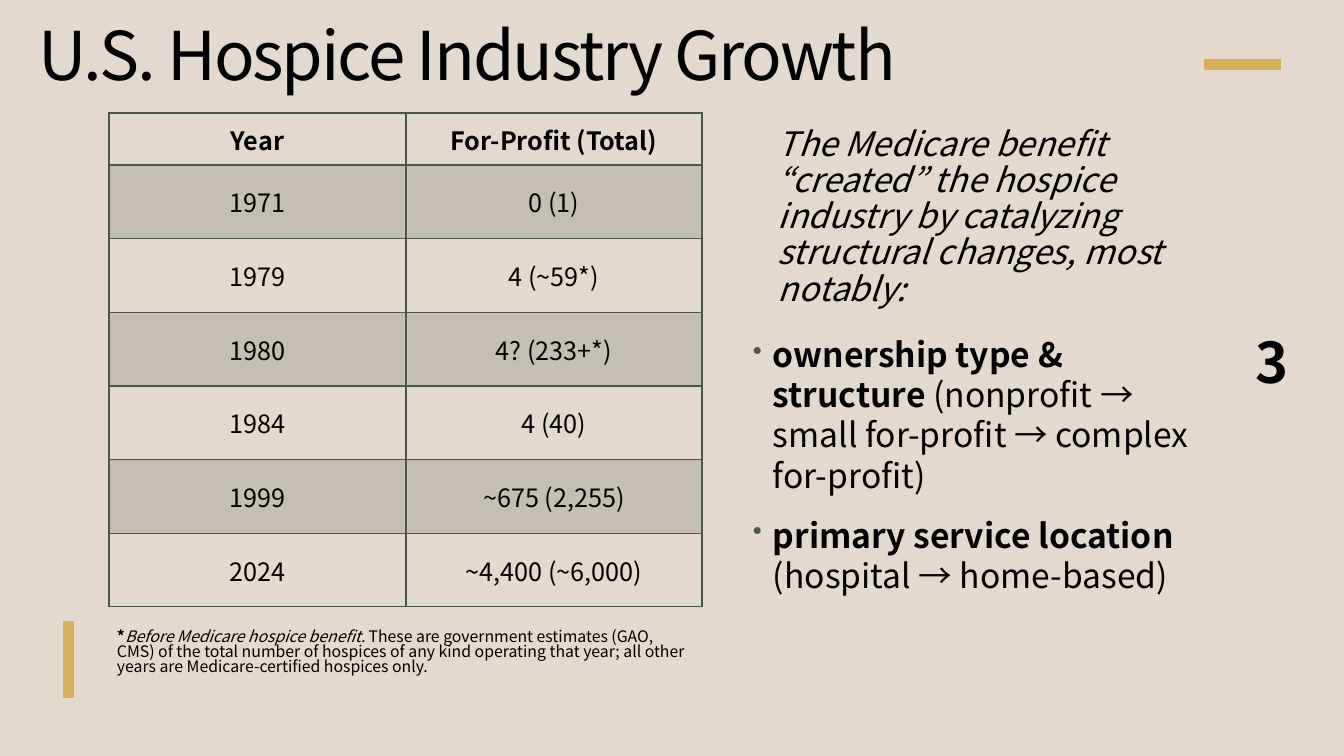
from dataclasses import dataclass

from lxml.etree import SubElement
from pptx import Presentation
from pptx.dml.color import RGBColor
from pptx.enum.shapes import MSO_SHAPE as Shape
from pptx.enum.text import MSO_ANCHOR as Anchor, PP_ALIGN as Align
from pptx.oxml import parse_xml
from pptx.oxml.ns import nsdecls, qn
from pptx.util import Emu, Pt


@dataclass(frozen=True)
class Theme:
    font: str = "Noto Sans CJK KR"
    paper: str = "E3D9CF"
    ink: str = "000000"
    gold: str = "D7AF5B"
    moss: str = "4C564C"
    title: float = 48
    number: float = 40
    body: float = 24
    table: float = 18
    note: float = 11.3


def px(count):
    return Emu(round(count * 914400 / 100.8))


def write(paragraph, text, *, font, size, color, bold=False, italic=False, spacing=0):
    run = paragraph.add_run()
    run.text = text
    run.font.name = font
    run.font.size = Pt(size)
    run.font.bold, run.font.italic = bold, italic
    run.font.color.rgb = RGBColor.from_string(color)
    properties = run._r.get_or_add_rPr()
    SubElement(properties, qn("a:ea")).set("typeface", font)
    if spacing:
        properties.set("spc", str(round(spacing * 100)))


class HospiceSlide:
    """Draws styled elements on one slide."""

    def __init__(self, deck, theme):
        self.theme = theme
        self.slide = deck.slides.add_slide(deck.slide_layouts[6])
        backdrop = self.slide.background.fill
        backdrop.solid()
        backdrop.fore_color.rgb = RGBColor.from_string(theme.paper)

    def bar(self, left, top, width, height, rotation=0):
        bar = self.slide.shapes.add_shape(Shape.RECTANGLE, px(left), px(top), px(width), px(height))
        bar.rotation = rotation
        bar.shadow.inherit = False
        bar.fill.solid()
        bar.fill.fore_color.rgb = RGBColor.from_string(self.theme.gold)
        bar.line.fill.background()

    def frame(self, left, top, width, height, anchor=Anchor.MIDDLE, right_inset=10):
        frame = self.slide.shapes.add_textbox(px(left), px(top), px(width), px(height)).text_frame
        frame.word_wrap = True
        frame.vertical_anchor = anchor
        frame.margin_left, frame.margin_right = px(10), px(right_inset)
        frame.margin_top = frame.margin_bottom = 0
        return frame

    def paragraph(self, frame, runs, size, first=True, align=Align.LEFT, line=1.0,
                  before=0, after=0, indent=0, bullet=False):
        paragraph = frame.paragraphs[0] if first else frame.add_paragraph()
        properties = paragraph._p.get_or_add_pPr()
        properties.set("marL", str(px(indent)))
        properties.set("indent", str(px(-20 if bullet else 0)))
        if bullet:
            color = SubElement(properties, qn("a:buClr"))
            SubElement(color, qn("a:srgbClr")).set("val", self.theme.moss)
            SubElement(properties, qn("a:buSzPct")).set("val", "80000")
            SubElement(properties, qn("a:buChar")).set("char", "•")
        paragraph.alignment = align
        paragraph.line_spacing = line
        paragraph.space_before, paragraph.space_after = Pt(before), Pt(after)
        for text, style in runs:
            write(paragraph, text, font=self.theme.font, size=size, color=self.theme.ink, **style)

    def table(self, left, top, columns, header, body, rows):
        grid = self.slide.shapes.add_table(
            len(rows), len(columns), px(left), px(top), px(sum(columns)), px(header + body)).table
        grid.first_row = grid.horz_banding = False
        for column, width in zip(grid.columns, columns):
            column.width = px(width)
        for index, values in enumerate(rows):
            grid.rows[index].height = px(body) // (len(rows) - 1) if index else px(header)
            for column, value in enumerate(values):
                cell = grid.cell(index, column)
                cell.vertical_anchor = Anchor.MIDDLE
                self.paragraph(cell.text_frame, [(value, {"bold": index == 0})],
                               self.theme.table, align=Align.CENTER)
                self.borders(cell, top=2 if index == 1 else 1, bottom=1 if index else 2)
                self.shade(cell, index % 2 == 1)

    def borders(self, cell, top, bottom):
        for side, weight in (("L", 1), ("R", 1), ("T", top), ("B", bottom)):
            cell._tc.get_or_add_tcPr().append(parse_xml(
                f'<a:ln{side} {nsdecls("a")} w="{Pt(weight)}"><a:solidFill>'
                f'<a:srgbClr val="{self.theme.moss}"/></a:solidFill></a:ln{side}>'))

    def shade(self, cell, shaded):
        if not shaded:
            cell.fill.background()
            return
        cell.fill.solid()
        cell.fill.fore_color.rgb = RGBColor.from_string(self.theme.moss)
        color = cell._tc.tcPr.find(qn("a:solidFill")).find(qn("a:srgbClr"))
        SubElement(color, qn("a:alpha")).set("val", "20000")


def main():
    deck = Presentation()
    deck.slide_width, deck.slide_height = px(1344), px(756)
    theme = Theme()
    page = HospiceSlide(deck, theme)
    bold, italic = {"bold": True}, {"italic": True}

    page.bar(1204, 59, 77, 11)
    page.bar(30, 654, 77, 11, rotation=270)

    title = page.frame(28, 26, 1064, 73)
    page.paragraph(title, [("U.S. Hospice Industry Growth", {"spacing": -1.5})], theme.title, line=0.75)

    page.table(109, 113, (297, 296), 52, 442, [
        ("Year", "For-Profit (Total)"),
        ("1971", "0 (1)"),
        ("1979", "4 (~59*)"),
        ("1980", "4? (233+*)"),
        ("1984", "4 (40)"),
        ("1999", "~675 (2,255)"),
        ("2024", "~4,400 (~6,000)"),
    ])

    number = page.frame(1159, 332, 130, 58, right_inset=0)
    page.paragraph(number, [("3", bold)], theme.number, align=Align.RIGHT)

    changes = page.frame(738, 127, 486, 489, anchor=Anchor.TOP)
    page.paragraph(changes, [(
        "The Medicare benefit “created” the hospice industry by catalyzing "
        "structural changes, most notably:", italic)], theme.body, line=0.9, after=4, indent=30)
    for heading, detail in (
        ("ownership type & structure ", "(nonprofit → small for-profit → complex for-profit)"),
        ("primary service location", " (hospital → home-based)"),
    ):
        page.paragraph(changes, [(heading, bold), (detail, {})], theme.body, first=False,
                       before=14, indent=25, bullet=True)

    footnote = page.frame(102, 622, 593, 62)
    page.paragraph(footnote, [
        ("*", bold),
        ("Before Medicare hospice benefit. ", italic),
        ("These are government estimates (GAO, CMS) of the total number of hospices of any kind "
         "operating that year; all other years are Medicare-certified hospices only.", {}),
    ], theme.note, line=0.8, indent=5)

    deck.save("out.pptx")


if __name__ == "__main__":
    main()
